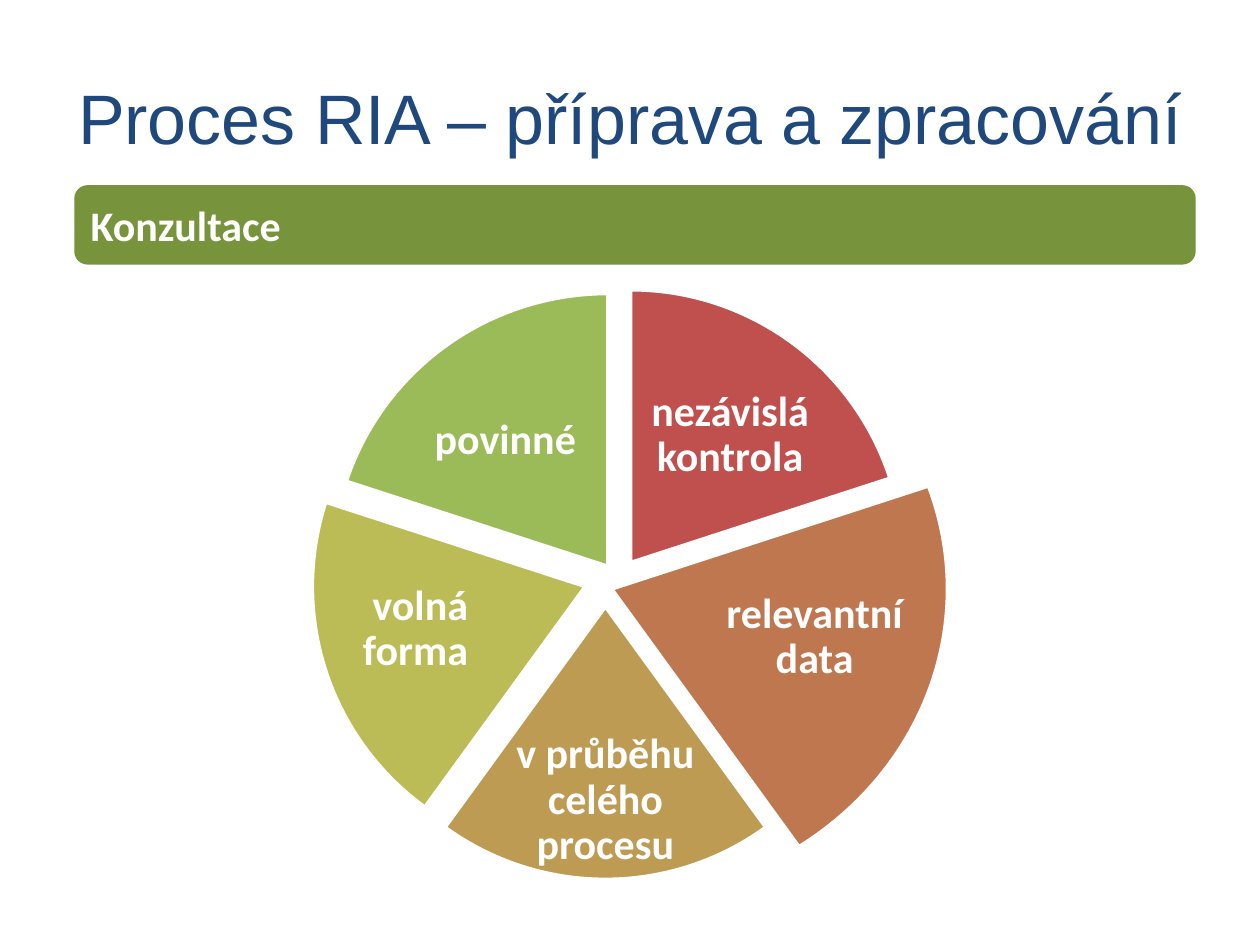
from dataclasses import dataclass

from pptx import Presentation
from pptx.dml.color import RGBColor
from pptx.enum.shapes import MSO_SHAPE
from pptx.enum.text import MSO_ANCHOR, PP_ALIGN
from pptx.util import Pt

EMU_PER_PX = 9144


@dataclass(frozen=True)
class Theme:
    heading: str = "1F497D"
    banner: str = "77933C"
    white: str = "FFFFFF"
    heading_font: str = "Arial"
    body_font: str = "Calibri"
    heading_size: int = 40
    body_size: int = 24
    outline: int = 2


THEME = Theme()
FIRST_ANGLE = 270
SLICES = [
    ("nezávislá kontrola", "C0504D", (65, 9, 433, 433), (287, 74, 147, 101)),
    ("relevantní data", "BF7750", (0, 0, 533, 493), (348, 223, 159, 124)),
    ("v průběhu celého procesu", "BD9B53", (45, 44, 433, 433), (184, 368, 155, 93)),
    ("volná forma ", "BCBC56", (29, 28, 433, 433), (50, 224, 129, 109)),
    ("povinné", "9BBB59", (45, 12, 437, 433), (108, 78, 148, 101)),
]


def px(*lengths):
    return [length * EMU_PER_PX for length in lengths]


def within(box, part):
    return px(box[0] + part[0], box[1] + part[1], *part[2:])


def write(holder, wording, font, align, inset=None, spacing=None):
    frame = holder.text_frame
    frame.word_wrap = True
    frame.vertical_anchor = MSO_ANCHOR.MIDDLE
    if inset is not None:
        for side in ("left", "top", "right", "bottom"):
            setattr(frame, f"margin_{side}", px(inset)[0])
    paragraph = frame.paragraphs[0]
    paragraph.alignment = align
    paragraph.line_spacing = spacing
    run = paragraph.add_run()
    run.text = wording
    colour, formats = font
    for name, value in formats.items():
        setattr(run.font, name, value)
    run.font.color.rgb = RGBColor.from_string(colour)


def paint(shape, fill):
    shape.shadow.inherit = False
    shape.fill.solid()
    shape.fill.fore_color.rgb = RGBColor.from_string(fill)


def body_font():
    formats = {"name": THEME.body_font, "size": Pt(THEME.body_size), "bold": True}
    return THEME.white, formats


def add_heading(slide, box):
    heading = slide.shapes.add_textbox(*px(*box))
    formats = {"name": THEME.heading_font, "size": Pt(THEME.heading_size)}
    write(heading, "Proces RIA – příprava a zpracování",
          (THEME.heading, formats), PP_ALIGN.CENTER)


def add_banner(slide, box):
    banner = slide.shapes.add_shape(MSO_SHAPE.ROUNDED_RECTANGLE, *px(*box))
    paint(banner, THEME.banner)
    banner.line.fill.background()
    write(banner, "Konzultace", body_font(), PP_ALIGN.LEFT)


def add_wheel(slide, box):
    wheel = slide.shapes.add_group_shape().shapes
    sweep = 360 / len(SLICES)
    for index, (wording, colour, circle, label_box) in enumerate(SLICES):
        piece = wheel.add_shape(MSO_SHAPE.PIE, *within(box, circle))
        for end in (0, 1):
            angle = (FIRST_ANGLE + (index + end) * sweep) % 360
            piece.adjustments[end] = angle * 60000 / 100000
        paint(piece, colour)
        piece.line.color.rgb = RGBColor.from_string(THEME.white)
        piece.line.width = Pt(THEME.outline)
        label = wheel.add_textbox(*within(box, label_box))
        write(label, wording, body_font(), PP_ALIGN.CENTER, inset=3, spacing=0.9)


def main():
    deck = Presentation()
    deck.slide_width, deck.slide_height = px(1000, 750)
    slide = deck.slides.add_slide(deck.slide_layouts[6])
    add_heading(slide, (50, 30, 900, 125))
    add_banner(slide, (59, 147, 890, 63))
    add_wheel(slide, (219, 221, 533, 493))
    deck.save("out.pptx")


if __name__ == "__main__":
    main()
